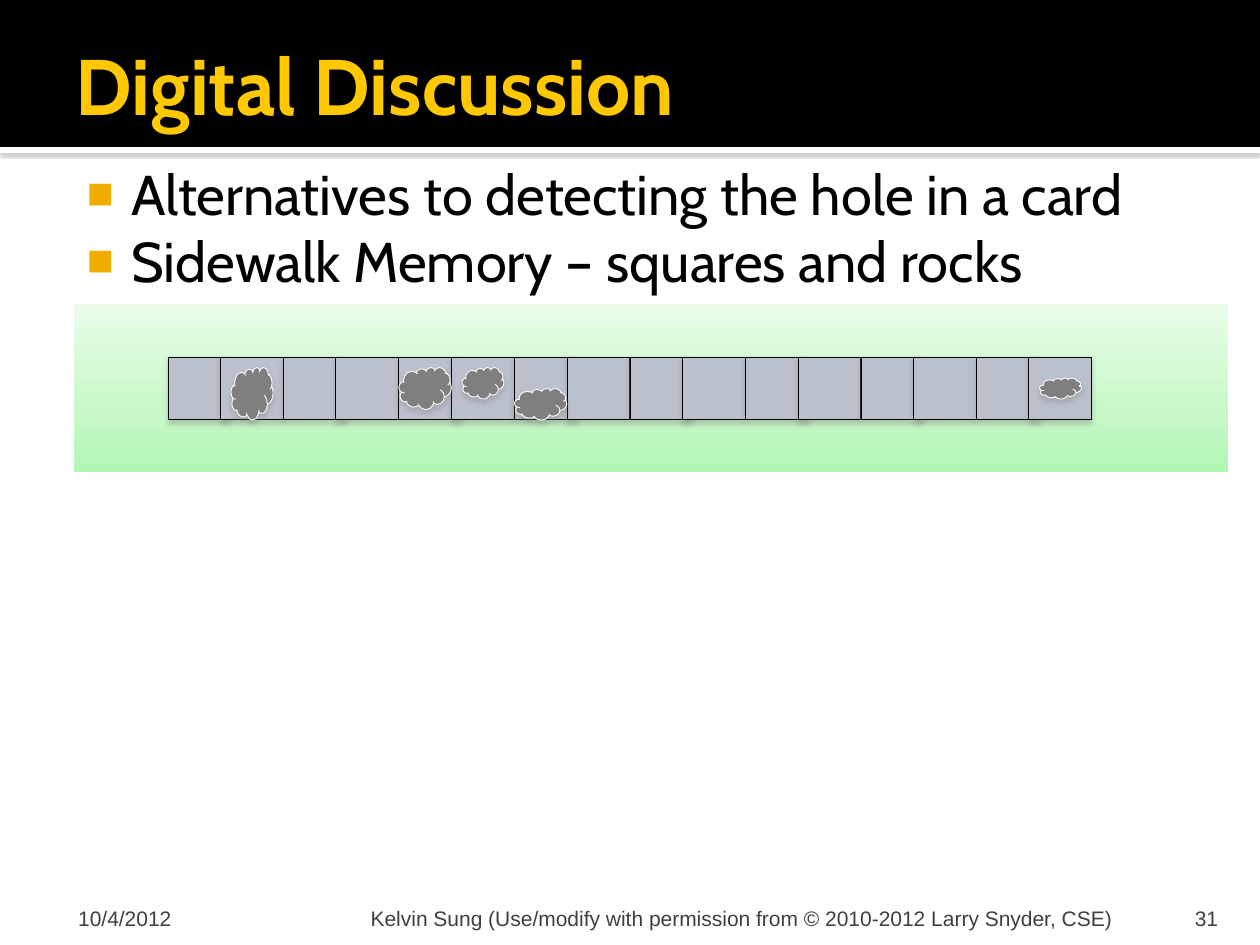
from copy import deepcopy
from pptx import Presentation
from pptx.dml.color import RGBColor
from pptx.enum.shapes import MSO_SHAPE
from pptx.enum.text import MSO_ANCHOR, MSO_AUTO_SIZE, PP_ALIGN
from pptx.oxml import parse_xml
from pptx.oxml.ns import nsdecls, qn
from pptx.util import Inches, Pt

RECT, CLOUD = MSO_SHAPE.RECTANGLE, MSO_SHAPE.CLOUD
TOP, MID, LOW = MSO_ANCHOR.TOP, MSO_ANCHOR.MIDDLE, MSO_ANCHOR.BOTTOM
LEFT, RIGHT = PP_ALIGN.LEFT, PP_ALIGN.RIGHT
FIXED = MSO_AUTO_SIZE.NONE
COLS, ROWS = 120, 90
HEX = {
    "white": "FFFFFF", "black": "000000", "gold": "FFC800", "amber": "F0AD00",
    "foot": "3F3F3F", "slab": "BAC0CC", "rock": "7F7F7F", "shade": "808080",
    "grass": "B0F6B1", "mint": "C8F8C8", "pale": "E9FDE9",
}


def rgb(name):
    return RGBColor.from_string(HEX[name])


class Deck:
    font, small = "Cabin", "Arial"

    def __init__(self):
        self.prs = Presentation()
        self.prs.slide_width, self.prs.slide_height = Inches(10), Inches(7.5)
        self.slide = self.prs.slides.add_slide(self.prs.slide_layouts[1])
        self.title, self.body = self.slide.placeholders

    def box(self, col, row, wide, high):
        dx, dy = self.prs.slide_width / COLS, self.prs.slide_height / ROWS
        return [round(n) for n in (col * dx, row * dy, wide * dx, high * dy)]

    def shape(self, home, kind, area, fill, line=None, shade=None):
        item = home.add_shape(kind, *self.box(*area))
        item.shadow.inherit = False
        if isinstance(fill, dict):
            self.blend(item.fill, fill)
        else:
            item.fill.solid()
            item.fill.fore_color.rgb = rgb(fill)
        if line:
            item.line.color.rgb = rgb(line)
            item.line.width = Pt(0.5)
        else:
            item.line.fill.background()
        if shade:
            self.shade(item, *shade)
        return item

    def blend(self, fill, stops):
        fill.gradient()
        fill.gradient_angle = 90
        first = fill.gradient_stops[0]._gs
        first.addnext(deepcopy(first))
        for stop, (name, place) in zip(fill.gradient_stops, stops.items()):
            stop.color.rgb = rgb(name)
            stop.position = place

    def shade(self, item, alpha, blur, dist):
        item._element.spPr.find(qn("a:effectLst")).append(parse_xml(
            f'<a:outerShdw {nsdecls("a")} blurRad="{Pt(blur)}" dist="{Pt(dist)}" '
            f'dir="5400000" algn="ctr" rotWithShape="0"><a:srgbClr val="{HEX["shade"]}">'
            f'<a:alpha val="{alpha * 1000}"/></a:srgbClr></a:outerShdw>'))

    def back(self, item):
        self.slide.shapes._spTree.insert(2, item._element)

    def place(self, item, area):
        item.left, item.top, item.width, item.height = self.box(*area)

    def text(self, item, lines, size, ink, font, pad, side=LEFT, anchor=LOW, bold=False):
        frame = item.text_frame
        frame.word_wrap, frame.auto_size = True, FIXED
        frame.vertical_anchor = anchor
        (frame.margin_left, frame.margin_top,
         frame.margin_right, frame.margin_bottom) = map(Inches, pad)
        for at, line in enumerate(lines):
            para = frame.add_paragraph() if at else frame.paragraphs[0]
            para.alignment = side
            para.space_before = para.space_after = Pt(0)
            run = para.add_run()
            run.text = line
            run.font.size, run.font.name, run.font.bold = Pt(size), font, bold
            run.font.color.rgb = rgb(ink)

    def head(self, text):
        self.place(self.title, (6, 2, 108, 12))
        self.text(self.title, [text], 45, "gold", self.font,
                  (0.1, 0.05, 0.05, 0.05), anchor=MID, bold=True)

    def list(self, lines):
        self.place(self.body, (6, 14, 108, 70))
        self.text(self.body, lines, 32, "black", self.font,
                  (0.06, 0.1, 0.1, 0.05), anchor=TOP)
        for para in self.body.text_frame.paragraphs:
            props = para._p.get_or_add_pPr()
            props.set("marL", str(Inches(0.48)))
            props.set("indent", str(Inches(-0.35)))
            for mark in (f'buClr {{}}><a:srgbClr val="{HEX["amber"]}"/></a:buClr>',
                         'buSzPct {} val="80000"/>',
                         f'buFont {{}} typeface="{self.small}"/>',
                         'buChar {} char="■"/>'):
                props.append(parse_xml("<a:" + mark.format(nsdecls("a"))))

    def foot(self, col, wide, text, pad, side=LEFT):
        item = self.slide.shapes.add_textbox(*self.box(col, 85, wide, 3.6))
        self.text(item, [text], 12, "foot", self.small, (pad[0], 0.05, pad[1], 0), side)

    def walk(self, count, rocks):
        home = self.slide.shapes.add_group_shape().shapes
        soft = (38, 3.1, 2)
        self.shape(home, RECT, (7, 29, 110, 16), {"grass": 0, "mint": 0.35, "pale": 1})
        for at in range(count):
            self.shape(home, RECT, (16 + at * 11 // 2, 34, 6, 6), "slab", "black", soft)
        for area in rocks:
            self.shape(home, CLOUD, area, "rock", "white", soft)


def main():
    deck = Deck()
    shapes = deck.slide.shapes
    deck.back(deck.shape(shapes, RECT, (0, 0, COLS, 14), "black"))
    deck.back(deck.shape(shapes, RECT, (0, 14, COLS, 0.6), "white", shade=(60, 2.5, 0.8)))
    deck.head("Digital Discussion")
    deck.list(["Alternatives to detecting the hole in a card",
               "Sidewalk Memory – squares and rocks"])
    deck.foot(6, 28, "10/4/2012", (0.12, 0.05))
    deck.foot(34.7, 72.2, "Kelvin Sung (Use/modify with permission from "
              "© 2010-2012 Larry Snyder, CSE)", (0.05, 0.05))
    deck.foot(107.6, 9.6, "31", (0.1, 0.1), RIGHT)
    deck.walk(16, [(22, 35, 4, 5), (38, 35, 5, 4), (44, 35, 4, 3),
                   (99, 36, 4, 2), (49, 37, 5, 3)])
    deck.prs.save("out.pptx")


if __name__ == "__main__":
    main()
